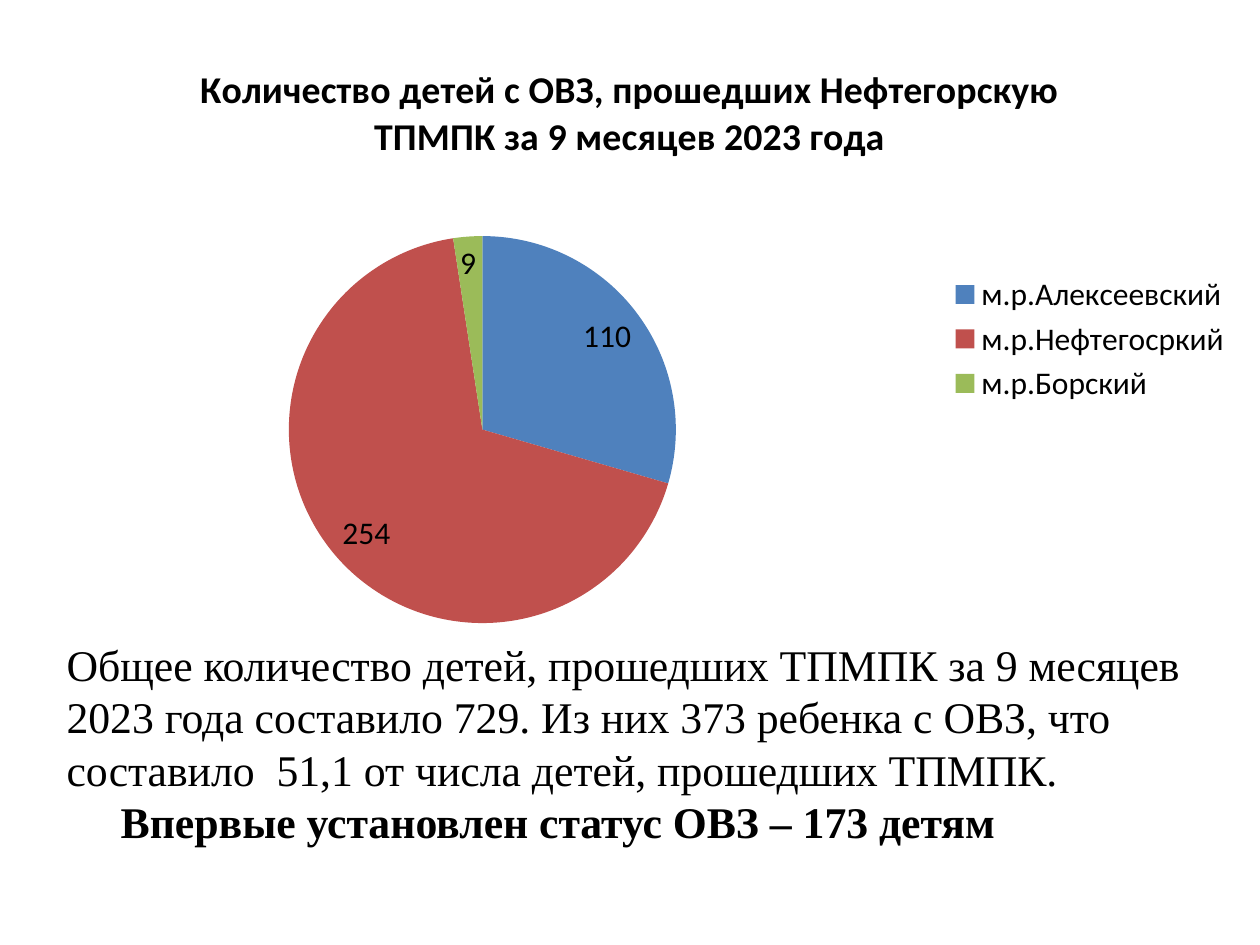
from lxml import etree
from pptx import Presentation
from pptx.chart.data import CategoryChartData
from pptx.dml.color import RGBColor
from pptx.enum.chart import XL_CHART_TYPE, XL_LABEL_POSITION, XL_LEGEND_POSITION
from pptx.enum.text import MSO_AUTO_SIZE
from pptx.oxml import parse_xml
from pptx.oxml.ns import nsdecls
from pptx.util import Inches, Pt

PIE = XL_CHART_TYPE.PIE
INSIDE_END = XL_LABEL_POSITION.INSIDE_END
LEGEND_RIGHT = XL_LEGEND_POSITION.RIGHT
FIT_SHAPE = MSO_AUTO_SIZE.SHAPE_TO_FIT_TEXT

BLACK = RGBColor(0x00, 0x00, 0x00)
BLUE = RGBColor(0x4F, 0x81, 0xBD)
RED = RGBColor(0xC0, 0x50, 0x4D)
GREEN = RGBColor(0x9B, 0xBB, 0x59)

# Content
HEADING = "Количество детей с ОВЗ, прошедших Нефтегорскую ТПМПК за 9 месяцев 2023 года"
DISTRICTS = [
    ("м.р.Алексеевский", 110, BLUE),
    ("м.р.Нефтегосркий", 254, RED),
    ("м.р.Борский", 9, GREEN),
]
# text, bold, left indent in inches
SUMMARY = [
    ("Общее количество детей, прошедших ТПМПК за 9 месяцев 2023 года составило 729. "
     "Из них 373 ребенка с ОВЗ, что составило  51,1 от числа детей, прошедших ТПМПК.",
     False, 0),
    ("Впервые установлен статус ОВЗ – 173 детям", True, 0.43),
]
# Pie area as fractions of the chart
PIE_AREA = {"x": 0.22, "y": 0.33, "w": 0.32, "h": 0.64}


def style(font, size, name, bold=False):
    font.size, font.name, font.bold = Pt(size), name, bold
    font.color.rgb = BLACK


def place_plot(chart, area):
    plot_area = chart.plots[0]._element.getparent()
    for old in plot_area.findall("{*}layout"):
        plot_area.remove(old)
    layout = parse_xml(
        f'<c:layout {nsdecls("c")}><c:manualLayout><c:layoutTarget val="inner"/>'
        '<c:xMode val="edge"/><c:yMode val="edge"/></c:manualLayout></c:layout>')
    manual = layout[0]
    for key, fraction in area.items():
        tag = etree.QName(etree.QName(manual).namespace, key)
        etree.SubElement(manual, tag).set("val", str(fraction))
    plot_area.insert(0, layout)


def add_district_pie(slide):
    data = CategoryChartData()
    data.categories = [name for name, _, _ in DISTRICTS]
    data.add_series(HEADING, [count for _, count, _ in DISTRICTS])
    chart = slide.shapes.add_chart(
        PIE, Inches(0.12), Inches(0.29), Inches(9.76), Inches(4.8), data).chart
    style(chart.font, 18, "Calibri")

    chart.has_title = True
    heading = chart.chart_title.text_frame
    heading.text = HEADING
    style(heading.paragraphs[0].font, 21.6, "Calibri", True)
    chart.chart_title.include_in_layout = False

    chart.has_legend = True
    chart.legend.position = LEGEND_RIGHT
    chart.legend.include_in_layout = False

    plot = chart.plots[0]
    plot.vary_by_categories = True
    plot.has_data_labels = True
    plot.data_labels.show_value = True
    plot.data_labels.show_percentage = False
    plot.data_labels.position = INSIDE_END
    for i, (_, _, color) in enumerate(DISTRICTS):
        fill = plot.series[0].points[i].format.fill
        fill.solid()
        fill.fore_color.rgb = color
    place_plot(chart, PIE_AREA)


def add_summary(slide):
    frame = slide.shapes.add_textbox(
        Inches(0.43), Inches(5.01), Inches(9.13), Inches(1.78)).text_frame
    frame.word_wrap = True
    frame.auto_size = FIT_SHAPE
    for i, (text, bold, indent) in enumerate(SUMMARY):
        paragraph = frame.add_paragraph() if i else frame.paragraphs[0]
        paragraph.text = text
        style(paragraph.font, 25, "Times New Roman", bold)
        if indent:
            paragraph._p.get_or_add_pPr().set("marL", str(Inches(indent)))


def main():
    deck = Presentation()
    deck.slide_width, deck.slide_height = Inches(10), Inches(7.5)
    slide = deck.slides.add_slide(deck.slide_layouts[6])
    add_district_pie(slide)
    add_summary(slide)
    deck.save("out.pptx")


if __name__ == "__main__":
    main()
